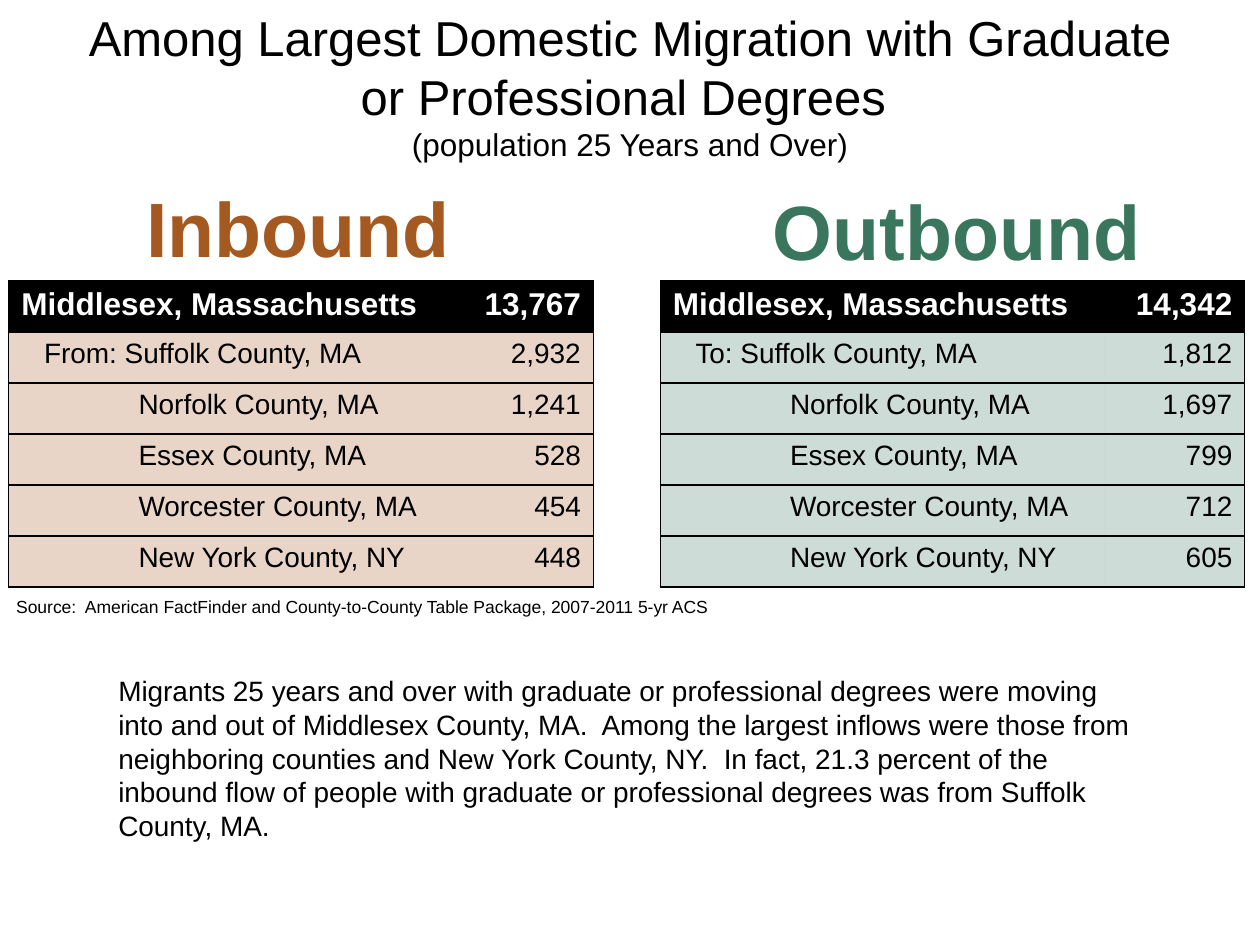
from dataclasses import dataclass

from lxml import etree
from pptx import Presentation
from pptx.dml.color import RGBColor
from pptx.enum.text import MSO_ANCHOR, MSO_AUTO_SIZE, PP_ALIGN
from pptx.oxml.ns import qn
from pptx.util import Inches, Pt

LEFT, CENTER, RIGHT = PP_ALIGN.LEFT, PP_ALIGN.CENTER, PP_ALIGN.RIGHT
MIDDLE = MSO_ANCHOR.MIDDLE
NO_AUTOFIT = MSO_AUTO_SIZE.NONE
TITLE_ONLY_LAYOUT = 5
PLAIN_TABLE_STYLE = "{2D5ABB26-0587-4C30-8999-92F81FD0307C}"


@dataclass(frozen=True)
class Theme:
    font: str = "Arial"
    black: str = "000000"
    white: str = "FFFFFF"
    inbound: str = "A45920"
    outbound: str = "3A765E"
    tint_percent: int = 25
    title_size: int = 28
    heading_size: int = 44
    header_size: int = 18
    body_size: int = 16
    source_size: int = 10
    border_width: float = 0.75


THEME = Theme()
COUNTIES = ["Suffolk County, MA", "Norfolk County, MA", "Essex County, MA",
            "Worcester County, MA", "New York County, NY"]
ROW_HEIGHT = 0.405
CELL_MARGIN = 0.1
FIRST_INDENT, COUNTY_INDENT = 0.18, 0.93


def style_paragraph(paragraph, size, color=THEME.black, bold=False, alignment=LEFT):
    paragraph.alignment = alignment
    font = paragraph.font
    font.name, font.size, font.bold = THEME.font, Pt(size), bold
    font.color.rgb = RGBColor.from_string(color)


def add_text(slide, box, text, size, wrap=True, **style):
    shape = slide.shapes.add_textbox(*map(Inches, box))
    shape.text_frame.word_wrap = wrap
    paragraph = shape.text_frame.paragraphs[0]
    paragraph.text = text
    style_paragraph(paragraph, size, **style)


def add_title(slide, box, text, subtitle):
    title = slide.shapes.title
    title.left, title.top, title.width, title.height = map(Inches, box)
    frame = title.text_frame
    frame.vertical_anchor = MIDDLE
    frame.auto_size = NO_AUTOFIT
    paragraph = frame.paragraphs[0]
    style_paragraph(paragraph, THEME.title_size, alignment=CENTER)
    paragraph.add_run().text = text
    paragraph.add_line_break()
    subtitle_run = paragraph.add_run()
    subtitle_run.text = subtitle
    subtitle_run.font.size = Pt(THEME.header_size)


def add_borders(cell, sides):
    properties = cell._tc.get_or_add_tcPr()
    for side in sides:
        line = etree.SubElement(properties, qn(f"a:ln{side}"), w=str(Pt(THEME.border_width)))
        fill = etree.SubElement(line, qn("a:solidFill"))
        etree.SubElement(fill, qn("a:srgbClr"), val=THEME.black)


def fill_cell(cell, color, opacity_percent=100):
    cell.fill.solid()
    cell.fill.fore_color.rgb = RGBColor.from_string(color)
    if opacity_percent < 100:
        color_element = cell._tc.tcPr.find(f".//{qn('a:solidFill')}[last()]")
        color_element = cell._tc.tcPr.find(qn("a:solidFill")).find(qn("a:srgbClr"))
        etree.SubElement(color_element, qn("a:alpha"), val=str(opacity_percent * 1000))


def add_flow_table(slide, box, value_width, direction, values, color):
    """Places a table with a black total row and one tinted row per county."""
    left, top, width = box
    rows = [("Middlesex, Massachusetts", values[0])]
    rows += zip([f"{direction}: {COUNTIES[0]}"] + COUNTIES[1:], values[1:])
    frame = slide.shapes.add_table(len(rows), 2, Inches(left), Inches(top),
                                   Inches(width), Inches(ROW_HEIGHT * len(rows)))
    table = frame.table
    table.first_row = table.horz_banding = False
    table._tbl.tblPr.find(qn("a:tableStyleId")).text = PLAIN_TABLE_STYLE
    table.columns[0].width = Inches(width - value_width)
    table.columns[1].width = Inches(value_width)

    indents = [0, FIRST_INDENT] + [COUNTY_INDENT] * (len(COUNTIES) - 1)
    for row_index, (row, indent) in enumerate(zip(rows, indents)):
        is_header = row_index == 0
        table.rows[row_index].height = Inches(ROW_HEIGHT)
        for column, (text, alignment, side) in enumerate(zip(row, (LEFT, RIGHT), "LR")):
            cell = table.cell(row_index, column)
            cell.text = text
            if column == 0:
                cell.margin_left = Inches(CELL_MARGIN + indent)
            add_borders(cell, side + "TB")
            if is_header:
                fill_cell(cell, THEME.black)
            else:
                fill_cell(cell, color, THEME.tint_percent)
            style_paragraph(cell.text_frame.paragraphs[0],
                            THEME.header_size if is_header else THEME.body_size,
                            THEME.white if is_header else THEME.black,
                            is_header, alignment)


def add_flow(slide, heading, heading_box, table_box, value_width, direction, values, color):
    add_text(slide, heading_box, heading, THEME.heading_size, wrap=False,
             color=color, bold=True, alignment=CENTER)
    add_flow_table(slide, table_box, value_width, direction, values, color)


def main():
    presentation = Presentation()
    presentation.slide_width, presentation.slide_height = Inches(10), Inches(7.5)
    slide = presentation.slides.add_slide(presentation.slide_layouts[TITLE_ONLY_LAYOUT])

    add_title(slide, (0.5, 0.05, 9, 1.25),
              "Among Largest Domestic Migration with Graduate or Professional Degrees ",
              "(population 25 Years and Over)")
    add_flow(slide, "Inbound", (1.05, 1.38, 2.64, 0.84), (0.07, 2.23, 4.64), 1.22, "From",
             ["13,767", "2,932", "1,241", "528", "454", "448"], THEME.inbound)
    add_flow(slide, "Outbound", (6.02, 1.41, 3.15, 0.84), (5.24, 2.23, 4.64), 1.11, "To",
             ["14,342", "1,812", "1,697", "799", "712", "605"], THEME.outbound)
    add_text(slide, (0.03, 4.68, 5.89, 0.27),
             "Source:  American FactFinder and County-to-County Table Package, "
             "2007-2011 5-yr ACS", THEME.source_size, wrap=False)
    add_text(slide, (0.84, 5.3, 8.32, 1.45),
             "Migrants 25 years and over with graduate or professional degrees were moving "
             "into and out of Middlesex County, MA.  Among the largest inflows were those "
             "from neighboring counties and New York County, NY.  In fact, 21.3 percent of "
             "the inbound flow of people with graduate or professional degrees was from "
             "Suffolk County, MA.", THEME.body_size)
    presentation.save("out.pptx")


if __name__ == "__main__":
    main()
